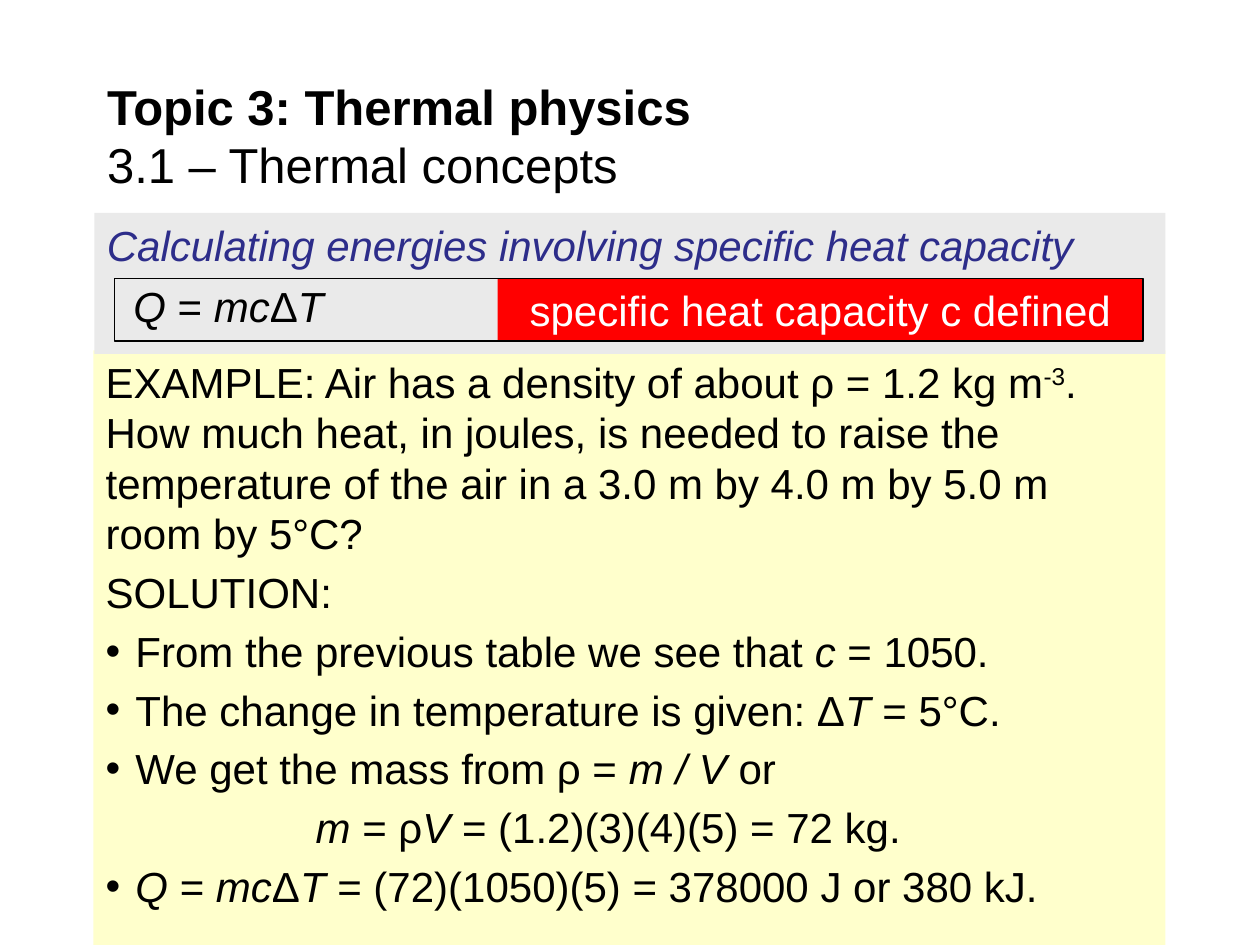
from pptx import Presentation
from pptx.dml.color import RGBColor
from pptx.enum.shapes import MSO_SHAPE
from pptx.enum.text import MSO_ANCHOR, MSO_AUTO_SIZE, PP_ALIGN
from pptx.oxml.ns import qn
from pptx.util import Pt
from lxml import etree

RECTANGLE = MSO_SHAPE.RECTANGLE
TOP, MIDDLE = MSO_ANCHOR.TOP, MSO_ANCHOR.MIDDLE
NO_AUTOFIT = MSO_AUTO_SIZE.NONE
LEFT, CENTER = PP_ALIGN.LEFT, PP_ALIGN.CENTER

BLACK = RGBColor(0x00, 0x00, 0x00)
WHITE = RGBColor(0xFF, 0xFF, 0xFF)
RED = RGBColor(0xFF, 0x00, 0x00)
GRAY = RGBColor(0xEA, 0xEA, 0xEA)
CREAM = RGBColor(0xFF, 0xFF, 0xCC)
INDIGO = RGBColor(0x2D, 0x2D, 0x8A)

FONT = "Arial"
BODY_SIZE = 24
PARA_GAP = 4.8
BULLET_INDENT = 17
EQUATION_INDENT = 120

ITALIC = {"italic": True}
BOLD = {"bold": True}
SUPERSCRIPT = {"baseline": 30000}

HEAT_FORMULA = [("Q", ITALIC), " = ", ("mc", ITALIC), "Δ", ("T", ITALIC)]
SOLUTION_STEPS = [
    (["From the previous table we see that ", ("c", ITALIC), " = 1050."], True),
    (["The change in temperature is given: Δ", ("T", ITALIC), " = 5°C."], True),
    (["We get the mass from ρ = ", ("m / V ", ITALIC), "or"], True),
    ([("m", ITALIC), " = ρ", ("V", ITALIC), " = (1.2)(3)(4)(5) = 72 kg."], False),
    (HEAT_FORMULA + [" = (72)(1050)(5) = 378000 J or 380 kJ."], True),
]


def set_indent(para, left, bullet):
    properties = para._p.get_or_add_pPr()
    properties.set("marL", str(Pt(left)))
    properties.set("indent", str(Pt(-left if bullet else 0)))
    if bullet:
        etree.SubElement(properties, qn("a:buFont"), typeface=FONT)
        etree.SubElement(properties, qn("a:buChar"), char="•")


def write(para, spans, size=BODY_SIZE, color=BLACK, align=LEFT, before=0,
          line_spacing=None, indent=0, bullet=False):
    """Fill a paragraph with spans, each a string or a (string, style) pair."""
    para.alignment = align
    para.space_before = Pt(before)
    if line_spacing:
        para.line_spacing = line_spacing
    set_indent(para, indent, bullet)
    for item in spans:
        text, style = (item, {}) if isinstance(item, str) else item
        if text == "\n":
            para.add_line_break()
            continue
        span = para.add_run()
        span.text = text
        font = span.font
        font.name, font.size, font.color.rgb = FONT, Pt(size), color
        font.bold = style.get("bold", False)
        font.italic = style.get("italic", False)
        if "baseline" in style:
            font._element.set("baseline", str(style["baseline"]))


def prepare_frame(shape, anchor=TOP):
    frame = shape.text_frame
    frame.word_wrap = True
    frame.auto_size = NO_AUTOFIT
    frame.vertical_anchor = anchor
    return frame


def add_panel(page, box, fill=None, line=None):
    panel = page.shapes.add_shape(RECTANGLE, *map(Pt, box))
    panel.shadow.inherit = False
    if fill is None:
        panel.fill.background()
    else:
        panel.fill.solid()
        panel.fill.fore_color.rgb = fill
    if line is None:
        panel.line.fill.background()
    else:
        panel.line.color.rgb = line
        panel.line.width = Pt(1)
    return panel


def place_title(page, box):
    title = page.shapes.title
    title.left, title.top, title.width, title.height = map(Pt, box)
    frame = prepare_frame(title, MIDDLE)
    write(frame.paragraphs[0],
          [("Topic 3: Thermal physics", BOLD), "\n", "3.1 – Thermal concepts"],
          size=28)


def add_example(page, box):
    frame = prepare_frame(add_panel(page, box, fill=CREAM))
    write(frame.paragraphs[0], [
        "EXAMPLE: Air has a density of about ρ = 1.2 kg m", ("-3", SUPERSCRIPT),
        ". How much heat, in joules, is needed to raise the temperature of "
        "the air in a 3.0 m by 4.0 m by 5.0 m room by 5°C?"])
    write(frame.add_paragraph(), ["SOLUTION:"], before=PARA_GAP)
    for spans, bullet in SOLUTION_STEPS:
        write(frame.add_paragraph(), spans, before=PARA_GAP, bullet=bullet,
              indent=BULLET_INDENT if bullet else EQUATION_INDENT)


def add_heading(page, box):
    frame = prepare_frame(add_panel(page, box, fill=GRAY))
    write(frame.paragraphs[0],
          [("Calculating energies involving specific heat capacity", ITALIC)],
          color=INDIGO)


def add_formula_bar(page, box):
    left, top, width, height = box
    label_width = 368.6
    formula = page.shapes.add_textbox(Pt(left + 3.6), Pt(top + 0.7),
                                      Pt(224.6), Pt(25.2))
    write(prepare_frame(formula).paragraphs[0], HEAT_FORMULA, line_spacing=0.9)

    label_box = (left + width - label_width, top, label_width, height)
    label = add_panel(page, label_box, fill=RED)
    write(prepare_frame(label, MIDDLE).paragraphs[0],
          ["specific heat capacity c defined"], color=WHITE, align=CENTER)
    add_panel(page, box, line=BLACK)


def main():
    deck = Presentation()
    deck.slide_width, deck.slide_height = Pt(720), Pt(540)
    page = deck.slides.add_slide(deck.slide_layouts[5])
    place_title(page, (54, 41.8, 612, 70.6))
    add_example(page, (53.3, 200.2, 612.7, 339.8))
    add_heading(page, (54, 121.7, 612, 80.6))
    add_formula_bar(page, (65.5, 159.1, 587.5, 36))
    deck.save("out.pptx")


if __name__ == "__main__":
    main()
